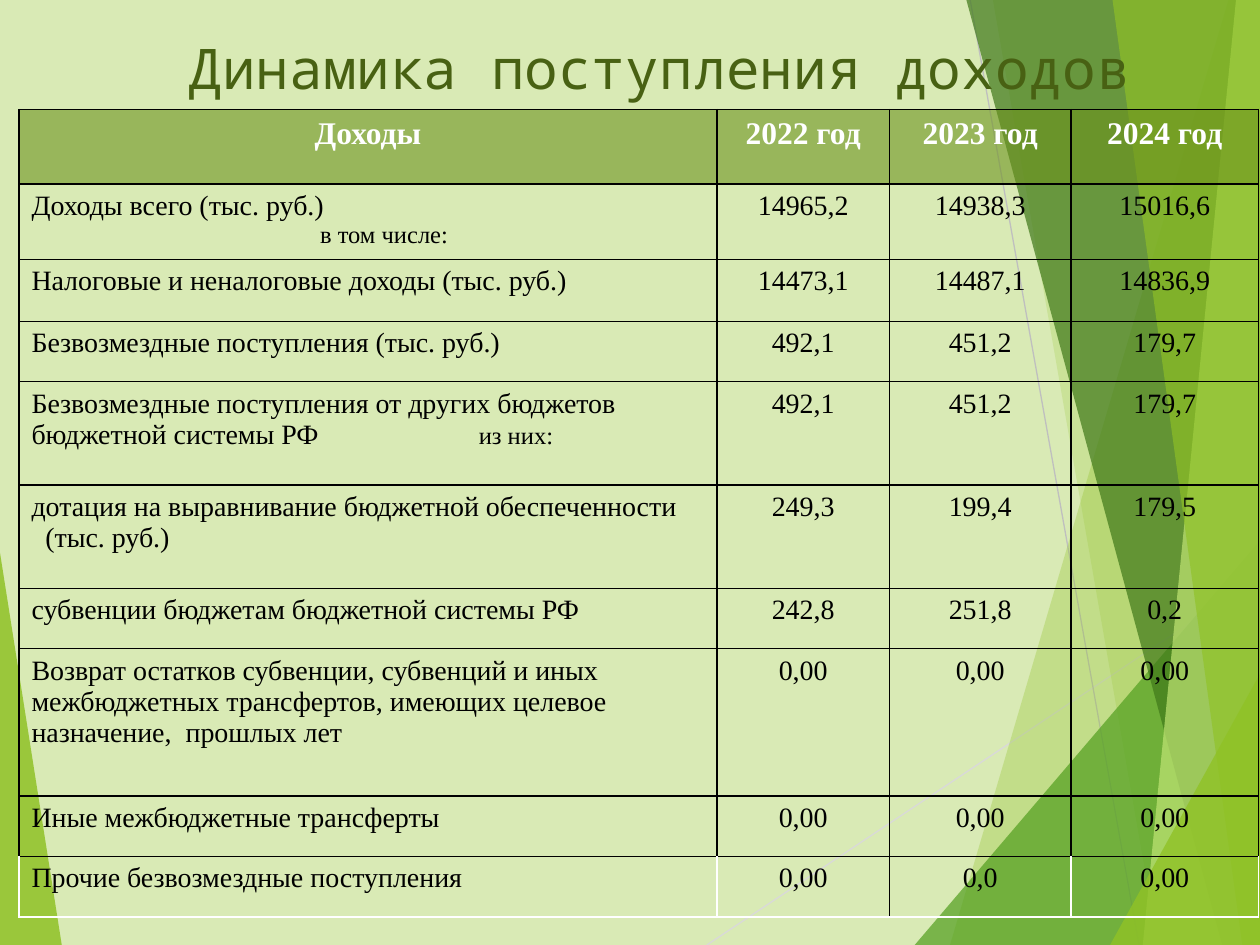
from lxml.etree import SubElement
from pptx import Presentation
from pptx.dml.color import RGBColor
from pptx.enum.shapes import MSO_CONNECTOR
from pptx.enum.text import MSO_ANCHOR, MSO_AUTO_SIZE, PP_ALIGN
from pptx.oxml.ns import qn
from pptx.util import Inches, Pt

WIDTH, HEIGHT = Inches(10), Inches(7.5)
COLORS = {
    "background": "D9EAB5", "lime": "90C226", "green": "54A021",
    "forest": "3F7819", "pale": "C0E474", "light_gray": "D9D9D9",
    "gray": "BFBFBF", "title": "486113", "header": "6C921D",
    "black": "000000", "white": "FFFFFF",
}
TITLE = "Динамика поступления доходов"
TITLE_FONT, TABLE_FONT = "Noto Sans Mono", "Times New Roman"
COLUMN_WIDTHS = [5.54, 1.37, 1.44, 1.49]
ROW_HEIGHTS = [0.59, 0.6, 0.49, 0.48, 0.82, 0.82, 0.48, 1.17, 0.48, 0.48]
HEADERS = ["Доходы", "2022 год", "2023 год", "2024 год"]
INCOME = [
    ("Доходы всего (тыс. руб.)", "14965,2", "14938,3", "15016,6"),
    ("Налоговые и неналоговые доходы (тыс. руб.)", "14473,1", "14487,1", "14836,9"),
    ("Безвозмездные поступления (тыс. руб.)", "492,1", "451,2", "179,7"),
    ("Безвозмездные поступления от других бюджетов бюджетной системы РФ",
     "492,1", "451,2", "179,7"),
    ("дотация на выравнивание бюджетной обеспеченности", "249,3", "199,4", "179,5"),
    ("субвенции бюджетам бюджетной системы РФ", "242,8", "251,8", "0,2"),
    ("Возврат остатков субвенции, субвенций и иных межбюджетных трансфертов, "
     "имеющих целевое назначение,  прошлых лет", "0,00", "0,00", "0,00"),
    ("Иные межбюджетные трансферты", "0,00", "0,00", "0,00"),
    ("Прочие безвозмездные поступления", "0,00", "0,0", "0,00"),
]
LAST_ROW_SIDES = ["white", "white", "black", "white", "white"]


def rgb(name):
    """Return the named colour."""
    return RGBColor.from_string(COLORS[name])


def across(percent):
    """Return a share of the slide width."""
    return round(WIDTH * percent / 100)


def down(percent):
    """Return a share of the slide height."""
    return round(HEIGHT * percent / 100)


def set_fill(fill, color, opacity):
    """Apply a solid fill with an opacity in percent."""
    fill.solid()
    fill.fore_color.rgb = rgb(color)
    color_element = fill._xPr.find(qn("a:solidFill"))[0]
    SubElement(color_element, qn("a:alpha"), val=str(opacity * 1000))


def add_polygon(slide, points, color, opacity):
    """Draw a translucent polygon from points in percent of the slide."""
    corners = [(across(x), down(y)) for x, y in points]
    builder = slide.shapes.build_freeform(*corners[0])
    builder.add_line_segments(corners[1:])
    shape = builder.convert_to_shape()
    shape.shadow.inherit = False
    shape.line.fill.background()
    set_fill(shape.fill, color, opacity)


def add_band(slide, top, bottom, color, opacity):
    """Fill the slide from a slanted edge to its right side."""
    points = [(top, 0), (bottom, 100), (100, 100), (100, 0)]
    add_polygon(slide, points, color, opacity)


def add_corner(slide, left, top, color, opacity):
    """Fill a triangle in the bottom right corner."""
    add_polygon(slide, [(left, 100), (100, top), (100, 100)], color, opacity)


def add_line(slide, start, end, color):
    """Draw a thin line between points in percent of the slide."""
    line = slide.shapes.add_connector(
        MSO_CONNECTOR.STRAIGHT, across(start[0]), down(start[1]),
        across(end[0]), down(end[1]))
    line.line.color.rgb = rgb(color)
    line.line.width = Pt(0.75)
    SubElement(line.element.spPr, qn("a:effectLst"))


def add_decoration(slide):
    """Draw the green facets behind the content."""
    add_polygon(slide, [(0, 58.5), (4.9, 100), (0, 100)], "lime", 85)
    add_line(slide, (56.1, 100), (100, 61), "light_gray")
    add_line(slide, (77, 0), (90.4, 100), "gray")
    add_band(slide, 97.5, 75.4, "lime", 30)
    add_band(slide, 78.8, 91.9, "lime", 20)
    add_corner(slide, 72.6, 57.2, "green", 72)
    add_band(slide, 76.7, 97, "forest", 70)
    add_band(slide, 98.1, 90.7, "pale", 70)
    add_band(slide, 88.3, 98.6, "lime", 65)
    add_corner(slide, 88.1, 71.3, "lime", 80)


def format_title(slide):
    """Fill the title and bring it in front of the decoration."""
    title = slide.shapes.title
    title.left, title.top = across(10.6), down(2.8)
    title.width, title.height = across(83.5), down(8.53)
    frame = title.text_frame
    frame.text = TITLE
    frame.auto_size = MSO_AUTO_SIZE.NONE
    frame.vertical_anchor = MSO_ANCHOR.MIDDLE
    style_paragraph(frame.paragraphs[0], 32, "title", TITLE_FONT, PP_ALIGN.CENTER)
    slide.shapes.element.append(title.element)


def style_paragraph(paragraph, size, color="black", name=TABLE_FONT,
                    alignment=PP_ALIGN.LEFT, bold=False):
    """Set the font and alignment of a paragraph."""
    font = paragraph.font
    font.size, font.name, font.bold = Pt(size), name, bold
    font.color.rgb = rgb(color)
    paragraph.alignment = alignment


def set_borders(cell, left, right, top, bottom):
    """Give a cell one-point borders in the named colours."""
    properties = cell._tc.get_or_add_tcPr()
    sides = {"a:lnL": left, "a:lnR": right, "a:lnT": top, "a:lnB": bottom}
    for position, (tag, color) in enumerate(sides.items()):
        line = properties.makeelement(qn(tag), {"w": str(Pt(1))})
        fill = SubElement(line, qn("a:solidFill"))
        SubElement(fill, qn("a:srgbClr"), val=COLORS[color])
        properties.insert(position, line)


def add_indented(cell, text, size, indent):
    """Add an indented paragraph to a cell."""
    paragraph = cell.text_frame.add_paragraph()
    paragraph.text = text
    style_paragraph(paragraph, size)
    paragraph._p.get_or_add_pPr().set("marL", str(Inches(indent)))


def add_tabbed_run(cell, text, size, position):
    """Add a run after a tab stop in the first paragraph of a cell."""
    paragraph = cell.text_frame.paragraphs[0]
    run = paragraph.add_run()
    run.text = "\t" + text
    run.font.size = Pt(size)
    properties = paragraph._p.get_or_add_pPr()
    tabs = properties.makeelement(qn("a:tabLst"), {})
    SubElement(tabs, qn("a:tab"), pos=str(Inches(position)), algn="l")
    properties.insert(0, tabs)


def fill_cell(cell, text, row, column):
    """Write and format one table cell."""
    cell.text = text
    paragraph = cell.text_frame.paragraphs[0]
    alignment = PP_ALIGN.CENTER if row == 0 or column else PP_ALIGN.LEFT
    if row == 0:
        style_paragraph(paragraph, 18, "white", alignment=alignment, bold=True)
        set_fill(cell.fill, "header", 59)
    else:
        style_paragraph(paragraph, 16, alignment=alignment)
        cell.fill.background()
    if row == len(INCOME):
        left, right = LAST_ROW_SIDES[column:column + 2]
        set_borders(cell, left, right, "black", "white")
    else:
        set_borders(cell, *["black"] * 4)


def add_income_table(slide):
    """Build the income table."""
    rows = [HEADERS, *INCOME]
    table = slide.shapes.add_table(
        len(rows), len(HEADERS), across(1.5), down(11.6),
        Inches(sum(COLUMN_WIDTHS)), Inches(sum(ROW_HEIGHTS))).table
    table.first_row = table.horz_banding = False
    for column, width in zip(table.columns, COLUMN_WIDTHS):
        column.width = Inches(width)
    for row, height in zip(table.rows, ROW_HEIGHTS):
        row.height = Inches(height)
    for row, texts in enumerate(rows):
        for column, text in enumerate(texts):
            fill_cell(table.cell(row, column), text, row, column)
    add_indented(table.cell(1, 0), "в том числе:", 14, 2.29)
    add_tabbed_run(table.cell(4, 0), "из них:", 14, 3.55)
    add_indented(table.cell(5, 0), "(тыс. руб.)", 16, 0.11)


def main():
    """Create the presentation."""
    presentation = Presentation()
    presentation.slide_width, presentation.slide_height = WIDTH, HEIGHT
    slide = presentation.slides.add_slide(presentation.slide_layouts[5])
    slide.background.fill.solid()
    slide.background.fill.fore_color.rgb = rgb("background")
    add_decoration(slide)
    format_title(slide)
    add_income_table(slide)
    presentation.save("out.pptx")


if __name__ == "__main__":
    main()
